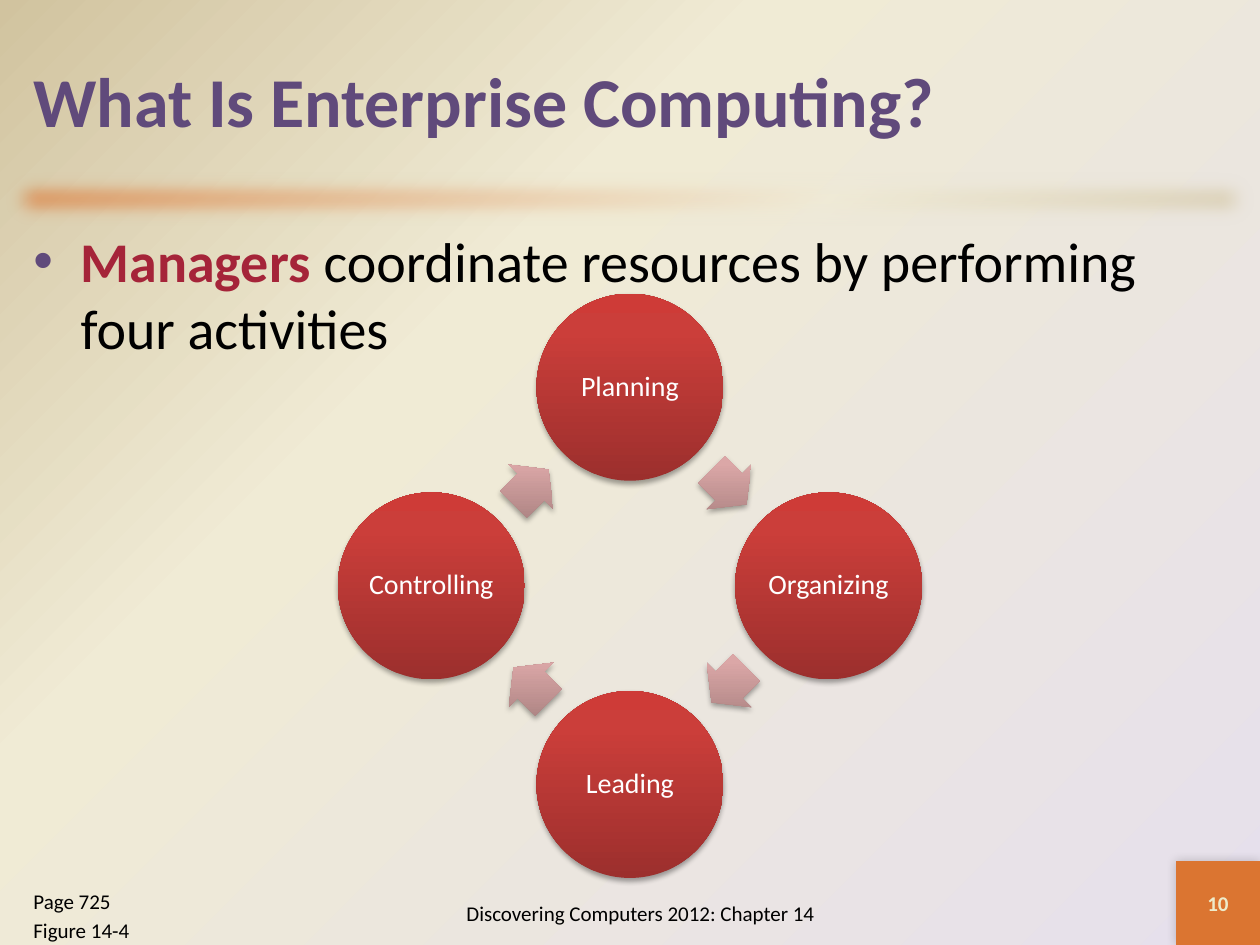
from math import cos, radians, sin

from lxml import etree
from pptx import Presentation
from pptx.dml.color import RGBColor
from pptx.enum.shapes import MSO_SHAPE as Shape
from pptx.enum.text import MSO_ANCHOR as Anchor, PP_ALIGN as Align
from pptx.oxml import parse_xml
from pptx.oxml.ns import nsdecls, qn
from pptx.util import Pt

COLORS = {
    "purple": "604A7B", "crimson": "A52439", "black": "000000",
    "white": "FFFFFF", "cream": "EEEBCA", "orange": "DB7531",
    "lilac": "E6E0EC", "sand": "F0EBD5", "tan": "D1C39F",
}
BACKGROUND = [(0, COLORS["lilac"]), (65, COLORS["sand"]), (100, COLORS["tan"])]
BAR = [(0, COLORS["orange"]), (65, COLORS["sand"]), (100, COLORS["tan"])]
CIRCLE = [(0, "9C2F2D"), (80, "CB3E3A"), (100, "CE3B37")]
ARROW = [(0, "A98180"), (80, "DBA7A7"), (100, "DDA7A6")]


def gradient_fill(stops, angle=None):
    """Return a gradFill element: linear at an angle, else circular from bottom right."""
    stop_xml = "".join(
        f'<a:gs pos="{position * 1000}"><a:srgbClr val="{color}"/></a:gs>'
        for position, color in stops)
    if angle is None:
        direction = '<a:path path="circle"><a:fillToRect l="100000" t="100000"/></a:path>'
    else:
        direction = f'<a:lin ang="{angle * 60000}" scaled="0"/>'
    return parse_xml(f'<a:gradFill {nsdecls("a")} rotWithShape="0">'
                     f'<a:gsLst>{stop_xml}</a:gsLst>{direction}</a:gradFill>')


def replace_solid(properties, gradient):
    properties.replace(properties.find(qn("a:solidFill")), gradient)


def add_bullet(paragraph, color, indent):
    properties = paragraph._p.get_or_add_pPr()
    properties.set("marL", str(Pt(indent)))
    properties.set("indent", str(-Pt(indent)))
    bullet_color = etree.SubElement(properties, qn("a:buClr"))
    etree.SubElement(bullet_color, qn("a:srgbClr")).set("val", COLORS[color])
    etree.SubElement(properties, qn("a:buFont")).set("typeface", "Arial")
    etree.SubElement(properties, qn("a:buChar")).set("char", "•")


def add_text(paragraph, text, size=12, color="black", bold=False):
    run = paragraph.add_run()
    run.text = text
    run.font.name = "Calibri"
    run.font.size = Pt(size)
    run.font.bold = bold
    run.font.color.rgb = RGBColor.from_string(COLORS[color])


class SlideBuilder:
    def __init__(self, slide):
        self.slide = slide

    def background(self, stops):
        self.slide.background.fill.solid()
        properties = self.slide._element.cSld.find(qn("p:bg")).find(qn("p:bgPr"))
        replace_solid(properties, gradient_fill(stops))

    def shape(self, kind, left, top, width, height, stops=None, angle=270):
        shape = self.slide.shapes.add_shape(kind, Pt(left), Pt(top), Pt(width), Pt(height))
        shape.shadow.inherit = False
        shape.line.fill.background()
        shape.fill.solid()
        shape.fill.fore_color.rgb = RGBColor.from_string(COLORS["orange"])
        if stops:
            replace_solid(shape._element.spPr, gradient_fill(stops, angle))
        return shape

    def shadow(self, shape, opacity=35, blur=3.1, distance=1.8, angle=90):
        effects = shape._element.spPr.find(qn("a:effectLst"))
        effects.append(parse_xml(
            f'<a:outerShdw {nsdecls("a")} blurRad="{Pt(blur)}" dist="{Pt(distance)}" '
            f'dir="{angle * 60000}" rotWithShape="0"><a:srgbClr val="000000">'
            f'<a:alpha val="{opacity * 1000}"/></a:srgbClr></a:outerShdw>'))

    def soft_edge(self, shape, radius):
        effects = shape._element.spPr.find(qn("a:effectLst"))
        etree.SubElement(effects, qn("a:softEdge")).set("rad", str(Pt(radius)))

    def label(self, shape, text, margin=1.44, **style):
        frame = shape.text_frame
        frame.word_wrap = True
        frame.vertical_anchor = Anchor.MIDDLE
        frame.margin_left = frame.margin_right = Pt(margin)
        frame.margin_top = frame.margin_bottom = Pt(margin)
        paragraph = frame.paragraphs[0]
        paragraph.alignment = Align.CENTER
        add_text(paragraph, text, **style)
        return paragraph

    def text_box(self, left, top, width, height, anchor=Anchor.TOP):
        box = self.slide.shapes.add_textbox(Pt(left), Pt(top), Pt(width), Pt(height))
        box.text_frame.word_wrap = True
        box.text_frame.vertical_anchor = anchor
        return box.text_frame

    def cycle(self, names, center_x, center_y, radius, diameter):
        """Place circles clockwise from the top, each followed by an arrow to the next."""
        arrow_width, arrow_height, arrow_radius = 28.2, 36, 80
        step = 360 / len(names)
        for index, name in enumerate(names):
            angle = index * step - 90
            x = center_x + radius * cos(radians(angle))
            y = center_y + radius * sin(radians(angle))
            circle = self.shape(Shape.OVAL, x - diameter / 2, y - diameter / 2,
                                diameter, diameter, CIRCLE)
            self.shadow(circle)
            self.label(circle, name, size=16, color="white").line_spacing = 0.9

            middle = angle + step / 2
            x = center_x + arrow_radius * cos(radians(middle))
            y = center_y + arrow_radius * sin(radians(middle))
            arrow = self.shape(Shape.RIGHT_ARROW, x - arrow_width / 2, y - arrow_height / 2,
                               arrow_width, arrow_height, ARROW)
            arrow.adjustments[0], arrow.adjustments[1] = 0.6, 0.5
            arrow.rotation = middle + 90
            self.shadow(arrow)


def main():
    presentation = Presentation()
    presentation.slide_width, presentation.slide_height = Pt(720), Pt(540)
    builder = SlideBuilder(presentation.slides.add_slide(presentation.slide_layouts[6]))
    builder.background(BACKGROUND)

    bar = builder.shape(Shape.RECTANGLE, 0, 96, 720, 36, BAR, angle=45)
    builder.soft_edge(bar, 12.5)
    page_square = builder.shape(Shape.RECTANGLE, 672, 492, 48, 48)
    builder.shadow(page_square, opacity=20, blur=6, distance=0, angle=225)
    builder.label(page_square, "10", color="cream", bold=True)

    title = builder.text_box(12, 12, 696, 90, Anchor.MIDDLE)
    add_text(title.paragraphs[0], "What Is Enterprise Computing?",
             size=40, color="purple", bold=True)

    body = builder.text_box(12, 126, 696, 366).paragraphs[0]
    add_bullet(body, "purple", 27)
    add_text(body, "Managers ", size=32, color="crimson", bold=True)
    add_text(body, "coordinate resources by performing four activities", size=32)

    footer = builder.text_box(216, 504, 300, 36, Anchor.MIDDLE).paragraphs[0]
    footer.alignment = Align.CENTER
    add_text(footer, "Discovering Computers 2012: Chapter 14")

    reference = builder.text_box(12, 504, 132, 36)
    add_text(reference.paragraphs[0], "Page 725")
    figure = reference.add_paragraph()
    figure.space_before = Pt(2.4)
    add_text(figure, "Figure 14-4")

    builder.cycle(["Planning", "Organizing", "Leading", "Controlling"],
                  center_x=360, center_y=334.8, radius=113.5, diameter=106.8)
    presentation.save("out.pptx")


if __name__ == "__main__":
    main()
